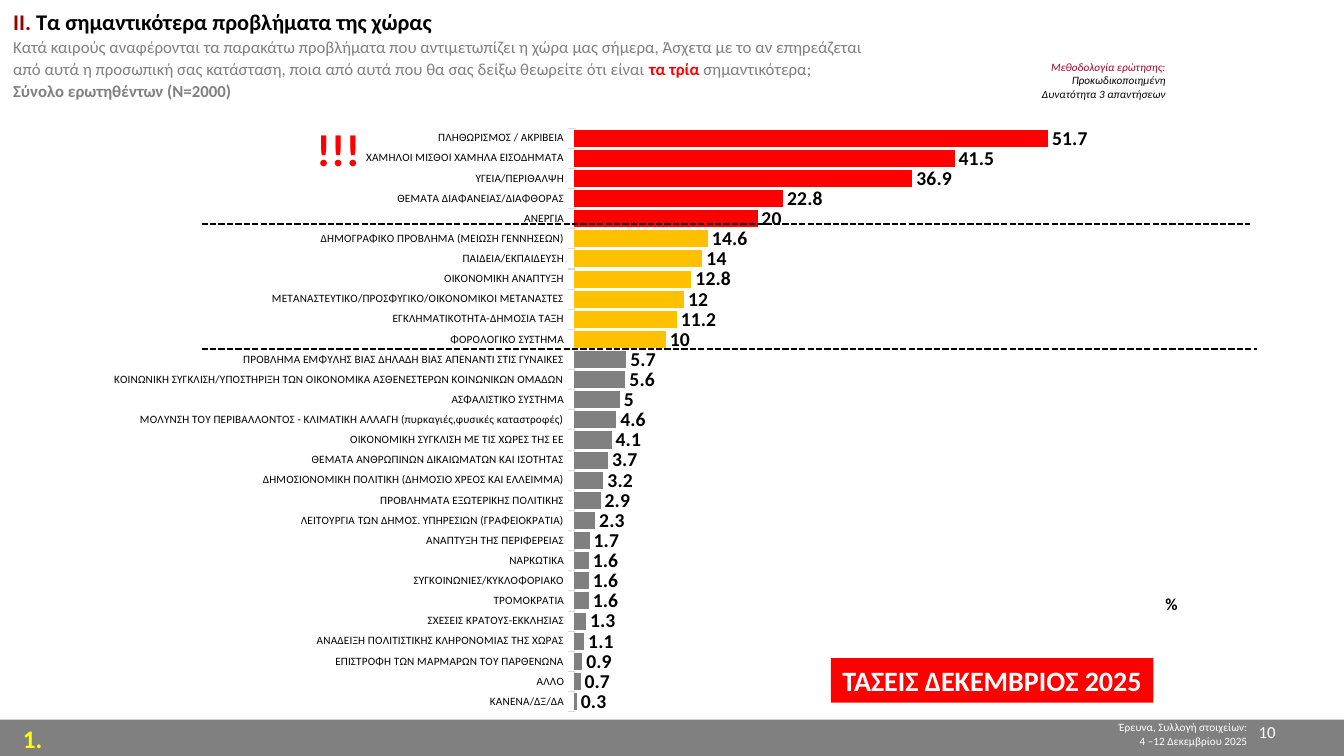
from lxml import etree
from pptx import Presentation
from pptx.chart.data import CategoryChartData
from pptx.dml.color import RGBColor
from pptx.enum.chart import XL_CHART_TYPE, XL_LABEL_POSITION, XL_TICK_MARK
from pptx.enum.dml import MSO_LINE
from pptx.enum.shapes import MSO_CONNECTOR, MSO_SHAPE
from pptx.enum.text import MSO_ANCHOR, MSO_AUTO_SIZE, PP_ALIGN
from pptx.oxml.ns import qn
from pptx.util import Inches, Pt

BAR = XL_CHART_TYPE.BAR_CLUSTERED
OUTSIDE_END = XL_LABEL_POSITION.OUTSIDE_END
TICK_OUT, TICK_NONE = XL_TICK_MARK.OUTSIDE, XL_TICK_MARK.NONE
DASH = MSO_LINE.SQUARE_DOT
STRAIGHT = MSO_CONNECTOR.STRAIGHT
RECT = MSO_SHAPE.RECTANGLE
TOP, MIDDLE = MSO_ANCHOR.TOP, MSO_ANCHOR.MIDDLE
NO_AUTOFIT = MSO_AUTO_SIZE.NONE
LEFT, CENTER, RIGHT = PP_ALIGN.LEFT, PP_ALIGN.CENTER, PP_ALIGN.RIGHT

FONT = "Calibri"
COLORS = {
    "black": "000000", "white": "FFFFFF", "grey": "808080", "rule": "D9D9D9",
    "red": "FF0000", "amber": "FFC000", "yellow": "FFFF00",
    "numeral": "990000", "method": "A50021",
}
# Bars per band, from the top of the ranking down
BANDS = [("red", 5), ("amber", 6), ("grey", 18)]
PROBLEMS = [
    ("ΠΛΗΘΩΡΙΣΜΟΣ / ΑΚΡΙΒΕΙΑ", 51.7),
    ("ΧΑΜΗΛΟΙ ΜΙΣΘΟΙ ΧΑΜΗΛΑ ΕΙΣΟΔΗΜΑΤΑ", 41.5),
    ("ΥΓΕΙΑ/ΠΕΡΙΘΑΛΨΗ", 36.9),
    ("ΘΕΜΑΤΑ ΔΙΑΦΑΝΕΙΑΣ/ΔΙΑΦΘΟΡΑΣ", 22.8),
    ("ΑΝΕΡΓΙΑ", 20),
    ("ΔΗΜΟΓΡΑΦΙΚΟ ΠΡΟΒΛΗΜΑ (ΜΕΙΩΣΗ ΓΕΝΝΗΣΕΩΝ)", 14.6),
    ("ΠΑΙΔΕΙΑ/ΕΚΠΑΙΔΕΥΣΗ", 14),
    ("ΟΙΚΟΝΟΜΙΚΗ ΑΝΑΠΤΥΞΗ", 12.8),
    ("ΜΕΤΑΝΑΣΤΕΥΤΙΚΟ/ΠΡΟΣΦΥΓΙΚΟ/ΟΙΚΟΝΟΜΙΚΟΙ ΜΕΤΑΝΑΣΤΕΣ", 12),
    ("ΕΓΚΛΗΜΑΤΙΚΟΤΗΤΑ-ΔΗΜΟΣΙΑ ΤΑΞΗ", 11.2),
    ("ΦΟΡΟΛΟΓΙΚΟ ΣΥΣΤΗΜΑ", 10),
    ("ΠΡΟΒΛΗΜΑ ΕΜΦΥΛΗΣ ΒΙΑΣ ΔΗΛΑΔΗ ΒΙΑΣ ΑΠΕΝΑΝΤΙ ΣΤΙΣ ΓΥΝΑΙΚΕΣ", 5.7),
    ("ΚΟΙΝΩΝΙΚΗ ΣΥΓΚΛΙΣΗ/ΥΠΟΣΤΗΡΙΞΗ ΤΩΝ ΟΙΚΟΝΟΜΙΚΑ ΑΣΘΕΝΕΣΤΕΡΩΝ ΚΟΙΝΩΝΙΚΩΝ ΟΜΑΔΩΝ", 5.6),
    ("ΑΣΦΑΛΙΣΤΙΚΟ ΣΥΣΤΗΜΑ", 5),
    ("ΜΟΛΥΝΣΗ ΤΟΥ ΠΕΡΙΒΑΛΛΟΝΤΟΣ - ΚΛΙΜΑΤΙΚΗ ΑΛΛΑΓΗ (πυρκαγιές,φυσικές καταστροφές)", 4.6),
    ("ΟΙΚΟΝΟΜΙΚΗ ΣΥΓΚΛΙΣΗ ΜΕ ΤΙΣ ΧΩΡΕΣ ΤΗΣ ΕΕ", 4.1),
    ("ΘΕΜΑΤΑ ΑΝΘΡΩΠΙΝΩΝ ΔΙΚΑΙΩΜΑΤΩΝ ΚΑΙ ΙΣΟΤΗΤΑΣ", 3.7),
    ("ΔΗΜΟΣΙΟΝΟΜΙΚΗ ΠΟΛΙΤΙΚΗ (ΔΗΜΟΣΙΟ ΧΡΕΟΣ ΚΑΙ ΕΛΛΕΙΜΜΑ)", 3.2),
    ("ΠΡΟΒΛΗΜΑΤΑ ΕΞΩΤΕΡΙΚΗΣ ΠΟΛΙΤΙΚΗΣ", 2.9),
    ("ΛΕΙΤΟΥΡΓΙΑ ΤΩΝ ΔΗΜΟΣ. ΥΠΗΡΕΣΙΩΝ (ΓΡΑΦΕΙΟΚΡΑΤΙΑ)", 2.3),
    ("ΑΝΑΠΤΥΞΗ ΤΗΣ ΠΕΡΙΦΕΡΕΙΑΣ", 1.7),
    ("ΝΑΡΚΩΤΙΚΑ", 1.6),
    ("ΣΥΓΚΟΙΝΩΝΙΕΣ/ΚΥΚΛΟΦΟΡΙΑΚΟ", 1.6),
    ("ΤΡΟΜΟΚΡΑΤΙΑ", 1.6),
    ("ΣΧΕΣΕΙΣ ΚΡΑΤΟΥΣ-ΕΚΚΛΗΣΙΑΣ", 1.3),
    ("ΑΝΑΔΕΙΞΗ ΠΟΛΙΤΙΣΤΙΚΗΣ ΚΛΗΡΟΝΟΜΙΑΣ ΤΗΣ ΧΩΡΑΣ", 1.1),
    ("ΕΠΙΣΤΡΟΦΗ ΤΩΝ ΜΑΡΜΑΡΩΝ ΤΟΥ ΠΑΡΘΕΝΩΝΑ", 0.9),
    ("ΑΛΛΟ", 0.7),
    ("ΚΑΝΕΝΑ/ΔΞ/ΔΑ", 0.3),
]


def rgb(name):
    return RGBColor.from_string(COLORS[name])


def style(font, size, color, bold=False, italic=False):
    font.name, font.size, font.bold, font.italic = FONT, Pt(size), bold, italic
    font.color.rgb = rgb(color)


def add_run(p, text, *look):
    r = p.add_run()
    r.text = text
    style(r.font, *look)


def fill_text(tf, paragraphs, align=LEFT, spacing=None):
    """Each paragraph is a list of (text, size, color, bold, italic) runs."""
    for i, runs in enumerate(paragraphs):
        p = tf.paragraphs[0] if i == 0 else tf.add_paragraph()
        p.alignment = align
        if spacing:
            p.line_spacing = spacing
        for run in runs:
            add_run(p, *run)


def add_text(s, box, paragraphs, align=LEFT, wrap=True):
    tf = s.shapes.add_textbox(*map(Inches, box)).text_frame
    tf.word_wrap = wrap
    fill_text(tf, paragraphs, align)


def add_block(s, box, color):
    sp = s.shapes.add_shape(RECT, *map(Inches, box))
    sp.shadow.inherit = False
    sp.fill.solid()
    sp.fill.fore_color.rgb = rgb(color)
    sp.line.fill.background()
    return sp


def add_title(s, box):
    sp = s.shapes.title
    sp.left, sp.top, sp.width, sp.height = map(Inches, box)
    tf = sp.text_frame
    tf.word_wrap, tf.auto_size, tf.vertical_anchor = True, NO_AUTOFIT, TOP
    fill_text(tf, [
        [("ΙΙ.", 16, "numeral", True),
         (" Τα σημαντικότερα προβλήματα της χώρας", 16, "black", True)],
        [("από αυτά η προσωπική σας κατάσταση, ποια από αυτά που θα σας δείξω "
          "θεωρείτε ότι είναι ", 12, "grey"),
         ("τα τρία", 12, "red", True), (" σημαντικότερα;", 12, "grey")],
        [("Σύνολο ερωτηθέντων (Ν=2000)", 12, "grey", True)],
    ], spacing=1.1)
    p = tf.paragraphs[0]
    p.add_line_break()
    add_run(p, "Κατά καιρούς αναφέρονται τα παρακάτω προβλήματα που αντιμετωπίζει "
            "η χώρα μας σήμερα, Άσχετα με το αν επηρεάζεται", 12, "grey")


def add_ranking(s, box):
    data = CategoryChartData()
    data.categories = [label for label, _ in PROBLEMS]
    data.add_series("Series 1", [value for _, value in PROBLEMS])
    chart = s.shapes.add_chart(BAR, *map(Inches, box), data).chart
    chart.has_legend = chart.has_title = False
    chart.font.name, chart.font.size = "Times New Roman", Pt(10)
    chart.font.color.rgb = rgb("black")

    # Axes
    cat, val = chart.category_axis, chart.value_axis
    cat.reverse_order = True
    cat.major_tick_mark, cat.minor_tick_mark = TICK_OUT, TICK_NONE
    style(cat.tick_labels.font, 8, "black")
    cat.format.line.color.rgb = rgb("rule")
    cat.format.line.width = Pt(0.75)
    val.visible = val.has_major_gridlines = False
    val.minimum_scale, val.maximum_scale = 0, 60

    # Bars, coloured by band
    plot = chart.plots[0]
    plot.gap_width, plot.vary_by_categories = 18, False
    series = plot.series[0]
    series.format.fill.solid()
    series.format.fill.fore_color.rgb = rgb("red")
    bar_colors = [color for color, count in BANDS for _ in range(count)]
    for i, color in enumerate(bar_colors):
        fill = series.points[i].format.fill
        fill.solid()
        fill.fore_color.rgb = rgb(color)
    labels = series.data_labels
    labels.show_value, labels.position = True, OUTSIDE_END
    style(labels.font, 14, "black", True)

    # Inner plot area
    area = chart.element.find(".//" + qn("c:plotArea"))
    for old in area.findall(qn("c:layout")):
        area.remove(old)
    layout = etree.Element(qn("c:layout"))
    area.insert(0, layout)
    manual = etree.SubElement(layout, qn("c:manualLayout"))
    for tag, value in [("layoutTarget", "inner"), ("xMode", "edge"), ("yMode", "edge"),
                       ("x", 0.5), ("y", 0.035), ("w", 0.462), ("h", 0.957)]:
        etree.SubElement(manual, qn("c:" + tag)).set("val", str(value))


def add_divider(s, x1, x2, y):
    line = s.shapes.add_connector(STRAIGHT, *map(Inches, (x1, y, x2, y)))
    line.line.color.rgb = rgb("black")
    line.line.width, line.line.dash_style = Pt(1.5), DASH
    etree.SubElement(line.element.spPr, qn("a:effectLst"))


def add_badge(s, box):
    tf = add_block(s, box, "red").text_frame
    tf.word_wrap, tf.vertical_anchor = False, MIDDLE
    fill_text(tf, [[("ΤΑΣΕΙΣ ΔΕΚΕΜΒΡΙΟΣ 2025", 20, "white", True)]], CENTER)


def add_footer(s, box):
    x, y, w, h = box
    add_block(s, box, "grey")
    add_text(s, (x + w - 3.75, y - 0.04, 2.89, h),
             [[("Έρευνα, Συλλογή στοιχείων:", 8, "white")],
              [("4 –12 Δεκεμβρίου 2025", 8, "white")]], RIGHT)
    add_text(s, (x + 0.13, y - 0.01, 0.67, 0.4), [[("1.", 18, "yellow", True)]])
    add_text(s, (x + w - 3.36, y - 0.03, 2.78, 0.4), [[("10", 12, "white")]], RIGHT)


def main():
    prs = Presentation()
    prs.slide_width, prs.slide_height = Inches(13.33), Inches(7.5)
    s = prs.slides.add_slide(prs.slide_layouts[5])
    add_footer(s, (0, 7.14, 13.33, 0.37))
    add_title(s, (0.03, 0, 10.33, 1.06))
    # Question method
    add_text(s, (7.91, 0.55, 3.75, 0.5),
             [[("Μεθοδολογία ερώτησης:", 8, "method", False, True)],
              [("Προκωδικοποιημένη", 8, "black", False, True)],
              [("Δυνατότητα 3 απαντήσεων", 8, "black", False, True)]], RIGHT)
    add_text(s, (11.46, 5.84, 0.32, 0.3), [[("%", 12, "black", True)]], wrap=False)
    add_ranking(s, (-0.21, 1.06, 11.81, 6.05))
    # Band dividers
    add_divider(s, 2, 12.4, 2.22)
    add_divider(s, 2, 12.47, 3.46)
    add_badge(s, (8.24, 6.53, 3.2, 0.44))
    add_text(s, (3.04, 1.16, 0.64, 0.64), [[("!!!", 32, "red", True)]], wrap=False)
    prs.save("out.pptx")


if __name__ == "__main__":
    main()
